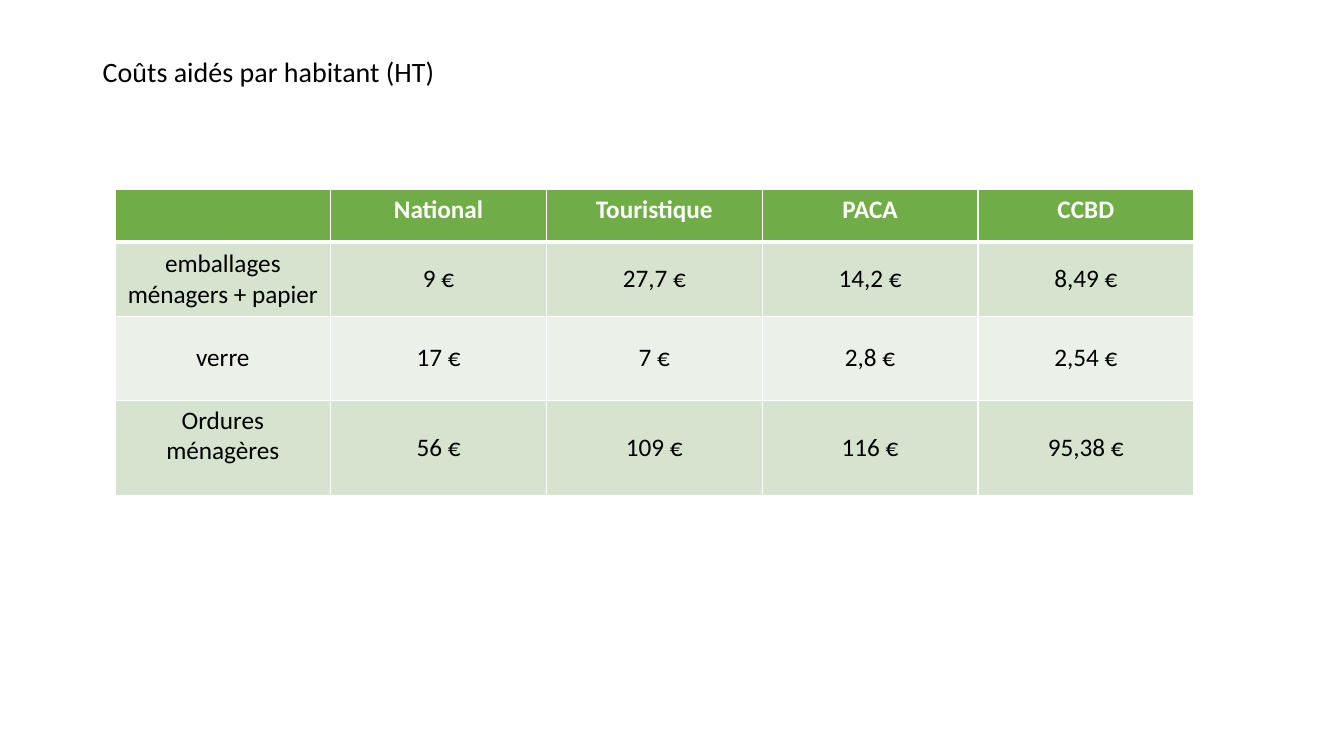
from pptx import Presentation
from pptx.dml.color import RGBColor
from pptx.enum.text import MSO_ANCHOR as ANCHOR, PP_ALIGN as ALIGN
from pptx.oxml.ns import qn
from pptx.util import Pt
from lxml.etree import SubElement

PX = 9144  # EMU per px, 100 px to the inch

WHITE = RGBColor(0xFF, 0xFF, 0xFF)
BLACK = RGBColor(0x00, 0x00, 0x00)
GREEN = RGBColor(0x70, 0xAD, 0x47)
BANDS = (RGBColor(0xD5, 0xE3, 0xCF), RGBColor(0xEB, 0xF1, 0xE9))

COSTS = [
    ("", "National", "Touristique", "PACA", "CCBD"),
    ("emballages ménagers + papier", "9 €", "27,7 €", "14,2 €", "8,49 €"),
    ("verre", "17 €", "7 €", "2,8 €", "2,54 €"),
    ("Ordures ménagères", "56 €", "109 €", "116 €", "95,38 €"),
]
ROW_HEIGHTS = (52, 74, 83, 95)
COL_WIDTH = 214


class Deck:
    font = "Calibri"

    def __init__(self, width, height):
        self.prs = Presentation()
        self.prs.slide_width = width * PX
        self.prs.slide_height = height * PX
        self.slide = self.prs.slides.add_slide(self.prs.slide_layouts[6])

    def style(self, p, size, color, bold=False):
        for r in p.runs:
            r.font.name = self.font
            r.font.size = Pt(size)
            r.font.bold = bold
            r.font.color.rgb = color

    def title(self, text, x, y, w, h):
        sp = self.slide.shapes.add_textbox(x * PX, y * PX, w * PX, h * PX)
        tf = sp.text_frame
        tf.word_wrap = True
        tf.vertical_anchor = ANCHOR.MIDDLE
        p = tf.paragraphs[0]
        p.text = text
        p.line_spacing = 0.9
        self.style(p, 20, BLACK)

    def borders(self, cell, bottom):
        tc_pr = cell._tc.get_or_add_tcPr()
        widths = {"a:lnL": 1, "a:lnR": 1, "a:lnT": 1, "a:lnB": bottom}
        for i, (tag, width) in enumerate(widths.items()):
            ln = SubElement(tc_pr, qn(tag), w=str(Pt(width)))
            fill = SubElement(ln, qn("a:solidFill"))
            SubElement(fill, qn("a:srgbClr"), val=str(WHITE))
            tc_pr.insert(i, ln)  # borders come before the fill

    def table(self, rows, x, y, col_width, heights):
        cols = len(rows[0])
        table = self.slide.shapes.add_table(
            len(rows), cols, x * PX, y * PX,
            cols * col_width * PX, sum(heights) * PX).table
        for col in table.columns:
            col.width = col_width * PX
        for i, (row, height) in enumerate(zip(rows, heights)):
            table.rows[i].height = height * PX
            header = i == 0
            for j, text in enumerate(row):
                cell = table.cell(i, j)
                cell.fill.solid()
                cell.fill.fore_color.rgb = GREEN if header else BANDS[(i - 1) % 2]
                # The header and the last row label sit at the top
                top = header or (i == len(rows) - 1 and j == 0)
                cell.vertical_anchor = ANCHOR.TOP if top else ANCHOR.MIDDLE
                # The header is set off by a thick rule
                self.borders(cell, 3 if header else 1)
                p = cell.text_frame.paragraphs[0]
                p.text = text
                p.alignment = ALIGN.CENTER
                self.style(p, 18, WHITE if header else BLACK, header)


def main():
    deck = Deck(1333, 750)
    # Cost table
    deck.table(COSTS, 114, 188, COL_WIDTH, ROW_HEIGHTS)
    # Title
    deck.title("Coûts aidés par habitant (HT)", 92, 0, 1150, 145)
    deck.prs.save("out.pptx")


if __name__ == "__main__":
    main()
